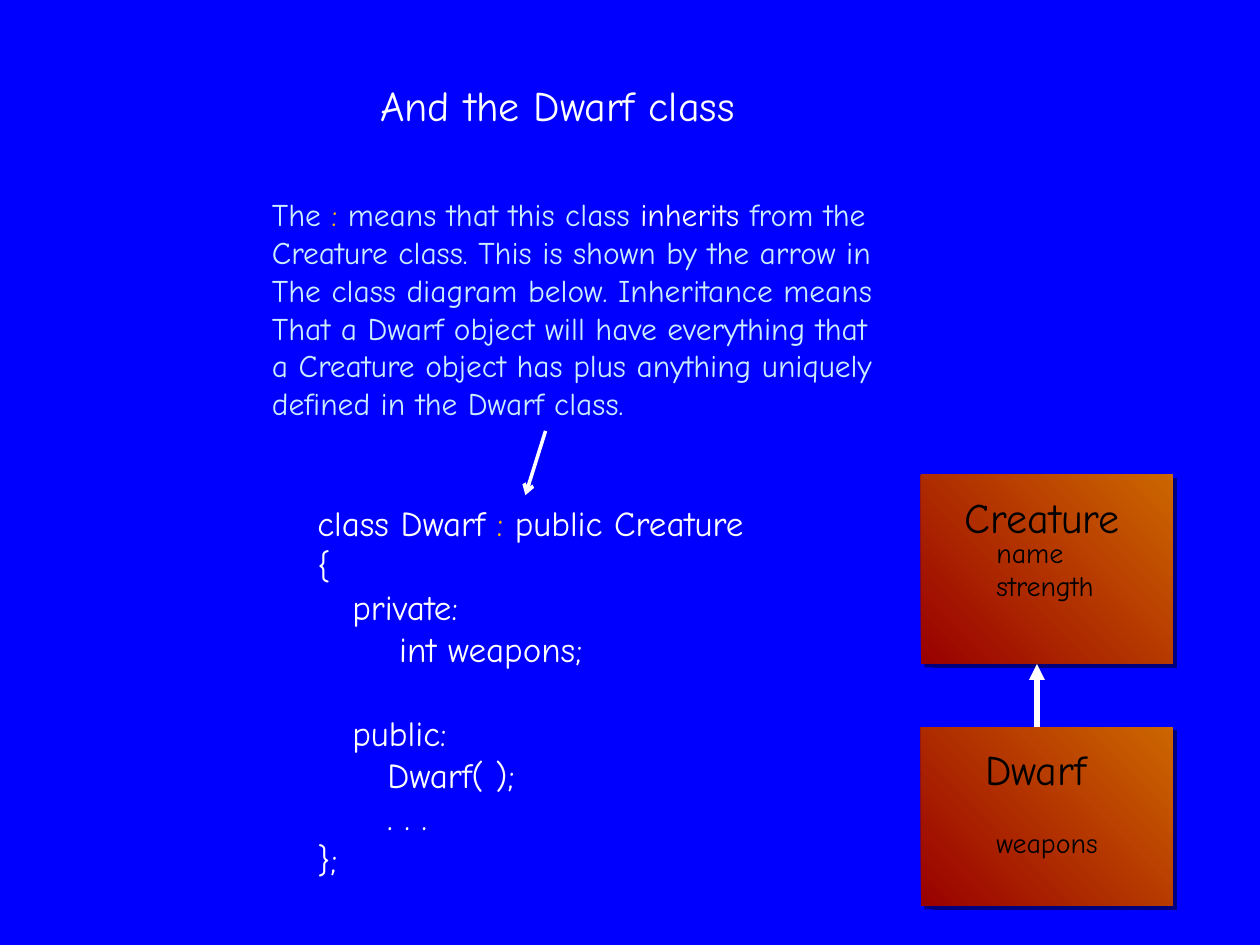
from dataclasses import dataclass

from lxml.etree import SubElement
from pptx import Presentation
from pptx.dml.color import RGBColor as RGB
from pptx.enum.shapes import MSO_CONNECTOR as Link, MSO_SHAPE as Shape
from pptx.enum.text import MSO_AUTO_SIZE as Fit
from pptx.oxml import parse_xml
from pptx.oxml.ns import nsdecls, qn
from pptx.util import Inches, Pt


@dataclass(frozen=True)
class Theme:
    font: str = "Comic Neue"
    back: str = "0000FF"
    white: str = "FFFFFF"
    black: str = "000000"
    pale: str = "CCECFF"
    gold: str = "FFC000"
    red: str = "990000"
    orange: str = "CC6600"
    head: int = 24
    code: int = 20
    body: int = 18
    field: int = 16


class Deck:
    def __init__(self, theme):
        self.theme = theme
        self.prs = Presentation()
        self.prs.slide_width, self.prs.slide_height = Inches(10), Inches(7.5)
        self.slide = self.prs.slides.add_slide(self.prs.slide_layouts[6])
        fill = self.slide.background.fill
        fill.solid()
        fill.fore_color.rgb = RGB.from_string(theme.back)

    def text(self, at, lines, size, color, gaps=None):
        """Each line is a string or a list of (text, color) pieces; gaps maps a line to its space before."""
        frame = self.slide.shapes.add_textbox(*map(Inches, at)).text_frame
        frame.word_wrap = False
        frame.auto_size = Fit.SHAPE_TO_FIT_TEXT
        for i, line in enumerate(lines):
            para = frame.add_paragraph() if i else frame.paragraphs[0]
            if gaps and i in gaps:
                para.space_before = Pt(gaps[i])
            for words, tint in [(line, color)] if isinstance(line, str) else line:
                run = para.add_run()
                run.text = words
                run.font.name = self.theme.font
                run.font.size = Pt(size)
                run.font.color.rgb = RGB.from_string(tint)

    def box(self, at):
        shape = self.slide.shapes.add_shape(Shape.RECTANGLE, *map(Inches, at))
        shape.line.fill.background()
        shape.fill.gradient()
        shape.fill.gradient_angle = 45
        for stop, tint in zip(shape.fill.gradient_stops, (self.theme.red, self.theme.orange)):
            stop.color.rgb = RGB.from_string(tint)
        shape.shadow.inherit = False
        effects = shape._element.spPr.find(qn("a:effectLst"))
        effects.append(parse_xml(
            f'<a:outerShdw {nsdecls("a")} blurRad="0" dist="{Pt(2.8)}" dir="2700000" algn="ctr">'
            f'<a:srgbClr val="{self.theme.black}"><a:alpha val="50000"/></a:srgbClr></a:outerShdw>'))

    def arrow(self, start, end, width, head):
        link = self.slide.shapes.add_connector(Link.STRAIGHT, *map(Inches, start + end))
        link.line.color.rgb = RGB.from_string(self.theme.white)
        link.line.width = Pt(width)
        SubElement(link.line._get_or_add_ln(), qn("a:tailEnd"), type=head)
        SubElement(link._element.spPr, qn("a:effectLst"))

    def save(self):
        self.prs.save("out.pptx")


def main():
    look = Theme()
    deck = Deck(look)

    deck.text((2.92, 0.58, 3.4, 0.5), ["And the Dwarf class"], look.head, look.white)

    notes = [
        [("The ", look.pale), (":", look.gold), (" means that this class ", look.pale),
         ("inherits", look.white), (" from the", look.pale)],
        "Creature class. This is shown by the arrow in",
        "The class diagram below. Inheritance means",
        "That a Dwarf object will have everything that",
        "a Creature object has plus anything uniquely",
        "defined in the Dwarf class.",
    ]
    deck.text((2.06, 1.5, 5.69, 1.92), notes, look.body, look.pale)

    code = [
        [("class Dwarf ", look.white), (":", look.gold), (" public Creature", look.white)],
        "{",
        "   private:",
        "       int weapons;",
        "   public:",
        "      Dwarf( );",
        "      . . .",
        "};",
    ]
    deck.text((2.42, 3.93, 4.16, 3.13), code, look.code, look.white, gaps={4: 24})

    # top, height, name, name left and width, fields, fields top, width and height
    classes = [
        (3.77, 1.5, "Creature", 7.56, 1.59, ["name", "strength"], 4.2, 1.12, 0.64),
        (5.77, 1.42, "Dwarf", 7.72, 1.18, ["weapons"], 6.5, 1.06, 0.37),
    ]
    for top, high, name, left, wide, fields, low, span, deep in classes:
        deck.box((7.31, top, 2, high))
        deck.text((left, top + 0.08, wide, 0.5), [name], look.head, look.black)
        deck.text((7.81, low, span, deep), fields, look.field, look.black)

    deck.arrow((8.23, 6.02), (8.23, 5.27), 3, "triangle")
    # The lower class box hides the foot of the arrow.
    tree = deck.slide.shapes._spTree
    tree.insert(tree.index(tree[-4]), tree[-1])
    deck.arrow((4.33, 3.42), (4.17, 3.93), 2, "arrow")

    deck.save()


if __name__ == "__main__":
    main()
